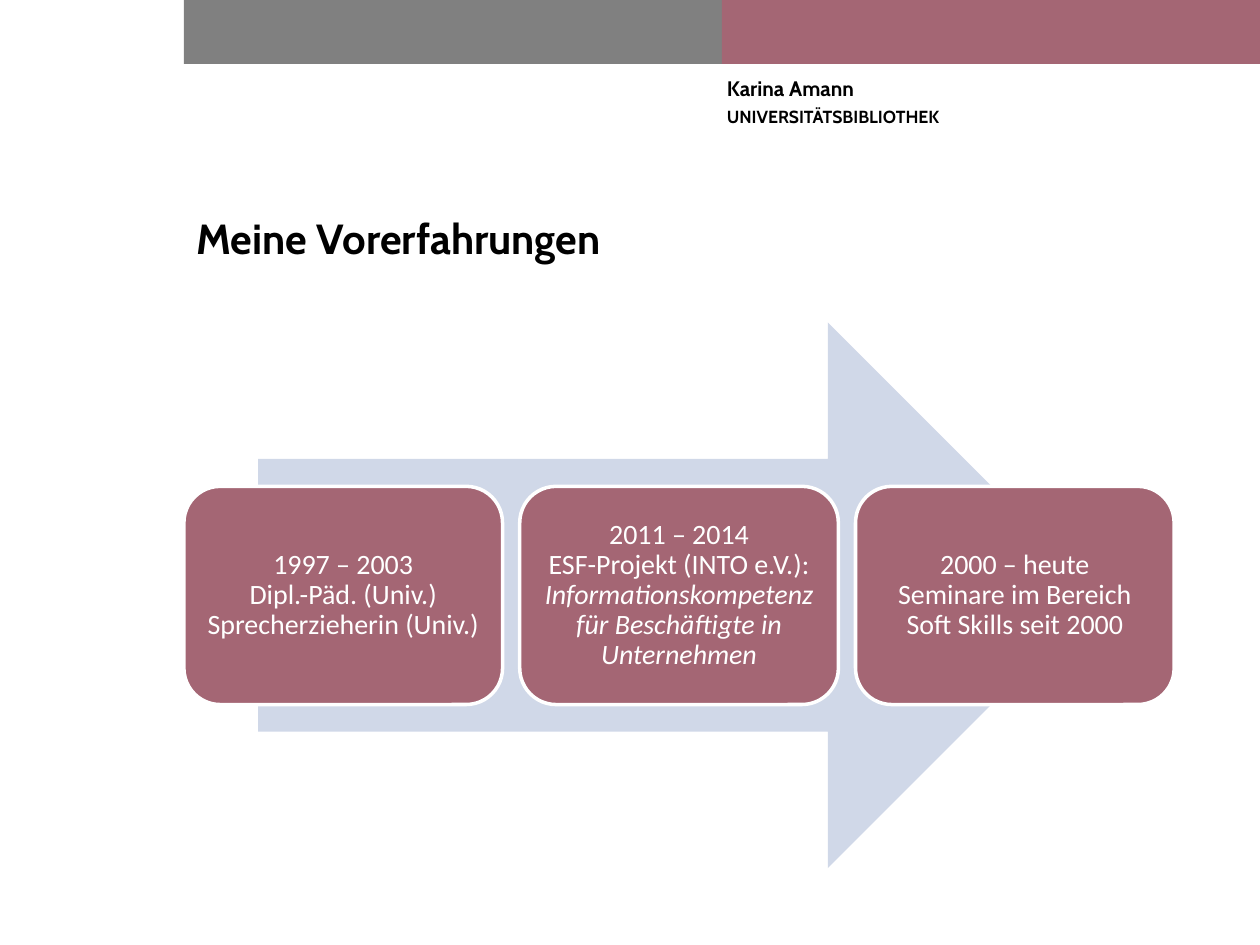
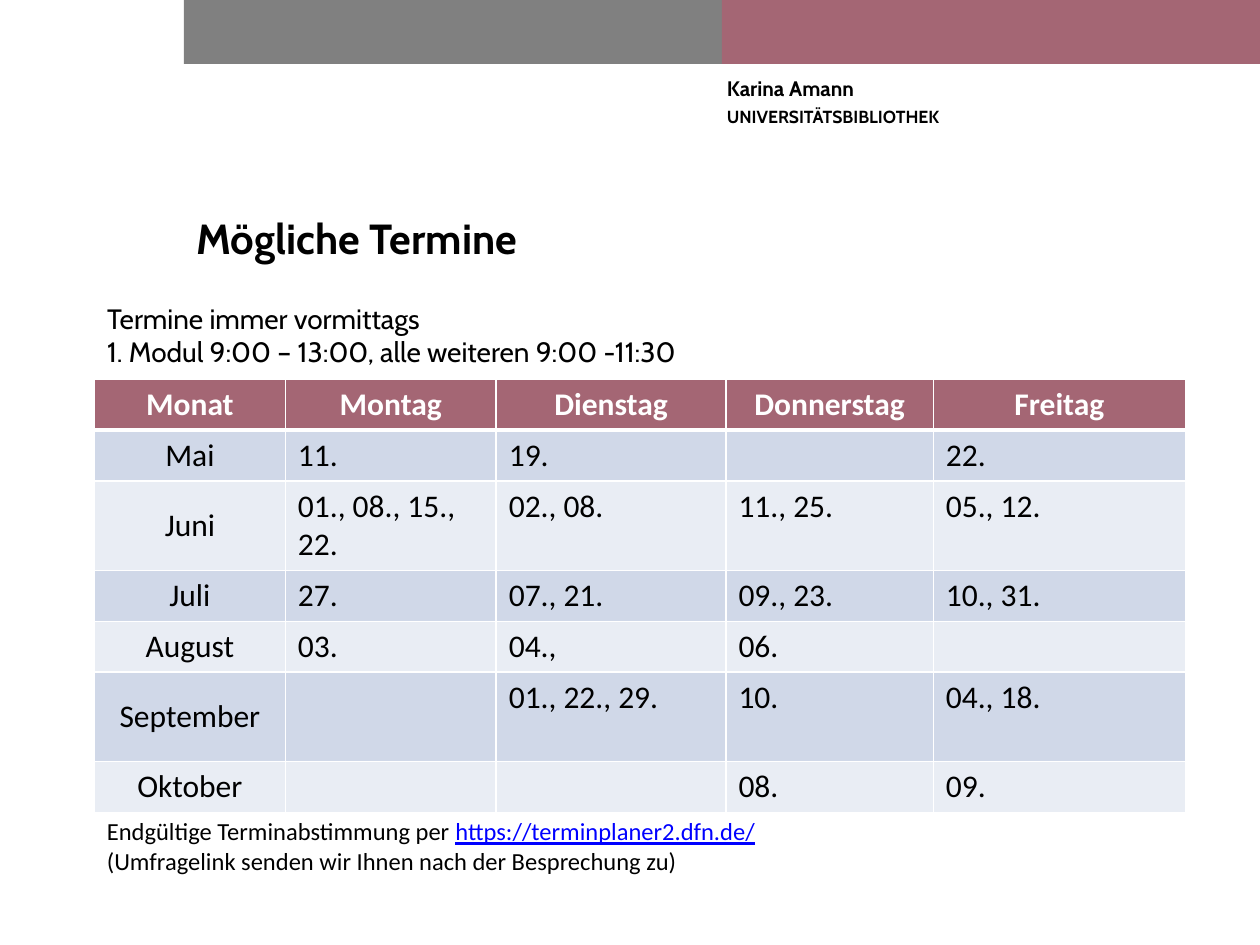
from lxml import etree
from pptx import Presentation
from pptx.dml.color import RGBColor
from pptx.enum.shapes import MSO_SHAPE
from pptx.enum.text import MSO_ANCHOR, MSO_AUTO_SIZE, PP_ALIGN
from pptx.oxml.ns import qn
from pptx.util import Pt

RECTANGLE, ROUNDED = MSO_SHAPE.RECTANGLE, MSO_SHAPE.ROUNDED_RECTANGLE
RIGHT_ARROW = MSO_SHAPE.RIGHT_ARROW
TOP, MIDDLE = MSO_ANCHOR.TOP, MSO_ANCHOR.MIDDLE
LEFT, CENTER = PP_ALIGN.LEFT, PP_ALIGN.CENTER
NO_AUTO_SIZE = MSO_AUTO_SIZE.NONE

PAGE_WIDTH, PAGE_HEIGHT = 720, 540
TITLE_ONLY, TITLE_AND_BODY = 5, 1
MARGIN = 105.1
CONTENT_WIDTH = 565.9
TABLE_LEFT, TABLE_WIDTH = 54, 623.5

GREY, ROSE, PALE_BLUE, PALER_BLUE = "808080", "A46674", "D0D8E8", "E9EDF4"
WHITE, BLACK, LINK_BLUE = "FFFFFF", "000000", "0000FF"
HEADING_FONT, TEXT_FONT = "Cabin", "Calibri"

CAREER_STEPS = [
    [("1997 – 2003\nDipl.-Päd. (Univ.) Sprecherzieherin (Univ.)", False)],
    [("2011 – 2014\nESF-Projekt (INTO e.V.):\n", False),
     ("Informationskompetenz für Beschäftigte in Unternehmen", True)],
    [("2000 – heute\nSeminare im Bereich Soft Skills seit 2000", False)],
]

DATES = [
    ["Monat", "Montag", "Dienstag", "Donnerstag", "Freitag"],
    ["Mai", "11.", "19.", "", "22."],
    ["Juni", "01., 08., 15.,\n22.", "02., 08.", "11., 25.", "05., 12."],
    ["Juli", "27.", "07., 21.", "09., 23.", "10., 31."],
    ["August", "03.", "04.,", "06.", ""],
    ["September", "", "01., 22., 29.", "10.", "04., 18."],
    ["Oktober", "", "", "08.", "09."],
]
COLUMN_WIDTHS = [109.1, 120.5, 131.3, 118.5, 144.1]
ROW_HEIGHT, TALL_ROW_HEIGHT = 29.1, 51.1
TALL_ROWS = ("Juni", "September")


def color(hex_string):
    return RGBColor.from_string(hex_string)


def write(paragraph, text, font=TEXT_FONT, size=18, ink=BLACK, bold=False,
          italic=False, underline=False, align=LEFT, after=0, spacing=1):
    """Append text to the paragraph; each newline becomes a line break."""
    paragraph.alignment = align
    paragraph.space_before = Pt(0)
    paragraph.space_after = Pt(after)
    paragraph.line_spacing = spacing
    for number, line in enumerate(text.split("\n")):
        if number:
            paragraph.add_line_break()
        if line:
            span = paragraph.add_run()
            span.text = line
            span.font.name = font
            span.font.size = Pt(size)
            span.font.color.rgb = color(ink)
            span.font.bold = bold
            span.font.italic = italic
            span.font.underline = underline


def next_paragraph(frame, number):
    return frame.add_paragraph() if number else frame.paragraphs[0]


def set_insets(frame, inset):
    frame.margin_left = frame.margin_right = Pt(inset)
    frame.margin_top = frame.margin_bottom = Pt(inset)


def set_borders(cell, bottom_width):
    properties = cell._tc.get_or_add_tcPr()
    for side in ("lnL", "lnR", "lnT", "lnB"):
        width = bottom_width if side == "lnB" else 1
        line = etree.SubElement(properties, qn(f"a:{side}"), w=str(Pt(width)))
        fill = etree.SubElement(line, qn("a:solidFill"))
        etree.SubElement(fill, qn("a:srgbClr"), val=WHITE)


class Builder:
    """Holds the deck's style and the current page."""

    def __init__(self):
        self.deck = Presentation()
        self.deck.slide_width = Pt(PAGE_WIDTH)
        self.deck.slide_height = Pt(PAGE_HEIGHT)
        self.page = None

    def new_page(self, title, layout):
        self.page = self.deck.slides.add_slide(self.deck.slide_layouts[layout])
        band_width = (PAGE_WIDTH - MARGIN) / 2
        for number, fill in enumerate((GREY, ROSE)):
            self.shape(RECTANGLE, MARGIN + number * band_width, 0, band_width, 36.5, fill)
        sender = self.text_box(415.4, 43.2, 290.9, 67.7, inset=0)
        for number, (text, size) in enumerate([("Karina Amann", 12), ("UNIVERSITÄTSBIBLIOTHEK", 10)]):
            write(next_paragraph(sender, number), text, font=HEADING_FONT,
                  size=size, bold=True, after=3)
        frame = self.placeholder(self.page.shapes.title, MARGIN, 118.1, CONTENT_WIDTH, 54.7)
        write(frame.paragraphs[0], title, font=HEADING_FONT, size=24, bold=True)

    def placeholder(self, holder, left, top, width, height):
        holder.left, holder.top = Pt(left), Pt(top)
        holder.width, holder.height = Pt(width), Pt(height)
        frame = holder.text_frame
        frame.auto_size = NO_AUTO_SIZE
        frame.vertical_anchor = TOP
        return frame

    def body(self, lines, left, top, width, height):
        frame = self.placeholder(self.page.placeholders[1], left, top, width, height)
        for number, line in enumerate(lines):
            para = next_paragraph(frame, number)
            properties = para._p.get_or_add_pPr()
            properties.set("marL", "0")
            properties.set("indent", "0")
            etree.SubElement(properties, qn("a:buNone"))
            write(para, line, font=HEADING_FONT, size=16)

    def shape(self, kind, left, top, width, height, fill, outline=None):
        box = self.page.shapes.add_shape(kind, Pt(left), Pt(top), Pt(width), Pt(height))
        box.shadow.inherit = False
        box.fill.solid()
        box.fill.fore_color.rgb = color(fill)
        if outline:
            box.line.color.rgb = color(outline)
            box.line.width = Pt(2)
        else:
            box.line.fill.background()
        return box

    def text_box(self, left, top, width, height, inset=None):
        frame = self.page.shapes.add_textbox(Pt(left), Pt(top), Pt(width), Pt(height)).text_frame
        frame.word_wrap = True
        if inset is not None:
            set_insets(frame, inset)
        return frame

    def card(self, spans, left, top, width, height):
        frame = self.shape(ROUNDED, left, top, width, height, ROSE, outline=WHITE).text_frame
        frame.word_wrap = True
        frame.vertical_anchor = MIDDLE
        set_insets(frame, 5)
        for text, italic in spans:
            write(frame.paragraphs[0], text, size=16, ink=WHITE, italic=italic,
                  align=CENTER, spacing=0.9)

    def table(self, rows, left, top, width):
        heights = [TALL_ROW_HEIGHT if row[0] in TALL_ROWS else ROW_HEIGHT for row in rows]
        table = self.page.shapes.add_table(len(rows), len(rows[0]), Pt(left), Pt(top),
                                           Pt(width), Pt(sum(heights))).table
        table.horz_banding = False
        for column, column_width in zip(table.columns, COLUMN_WIDTHS):
            column.width = Pt(column_width)
        for row_number, row in enumerate(rows):
            table.rows[row_number].height = Pt(heights[row_number])
            for column_number, text in enumerate(row):
                self.cell(table.cell(row_number, column_number), text,
                          row_number, column_number)

    def cell(self, cell, text, row_number, column_number):
        header, month = row_number == 0, column_number == 0
        set_borders(cell, 3 if header else 1)
        cell.fill.solid()
        band = PALE_BLUE if row_number % 2 else PALER_BLUE
        cell.fill.fore_color.rgb = color(ROSE if header else band)
        cell.vertical_anchor = MIDDLE if month and not header else TOP
        for number, line in enumerate(text.split("\n")):
            write(next_paragraph(cell.text_frame, number), line, bold=header,
                  ink=WHITE if header else BLACK,
                  align=CENTER if header or month else LEFT)


def build_experience(builder):
    builder.new_page("Meine Vorerfahrungen", TITLE_ONLY)
    builder.shape(RIGHT_ARROW, 147.5, 184.3, 481.5, 311.8, PALE_BLUE)
    card_width = 182.1
    pitch = (CONTENT_WIDTH - card_width) / (len(CAREER_STEPS) - 1)
    for number, spans in enumerate(CAREER_STEPS):
        builder.card(spans, MARGIN + number * pitch, 277.9, card_width, 124.7)


def build_dates(builder):
    builder.new_page("Mögliche Termine", TITLE_AND_BODY)
    builder.body(["Termine immer vormittags",
                  "1. Modul 9:00 – 13:00, alle weiteren 9:00 -11:30"],
                 TABLE_LEFT, 168.5, 572.4, 48.2)
    builder.table(DATES, TABLE_LEFT, 216.7, TABLE_WIDTH)
    note = builder.text_box(TABLE_LEFT, 463, TABLE_WIDTH, 41)
    write(note.paragraphs[0], "Endgültige Terminabstimmung per ", size=14)
    write(note.paragraphs[0], "https://terminplaner2.dfn.de/", size=14,
          ink=LINK_BLUE, underline=True)
    write(note.add_paragraph(), "(Umfragelink senden wir Ihnen nach der Besprechung zu)", size=14)


def main():
    builder = Builder()
    build_experience(builder)
    build_dates(builder)
    builder.deck.save("out.pptx")


if __name__ == "__main__":
    main()
